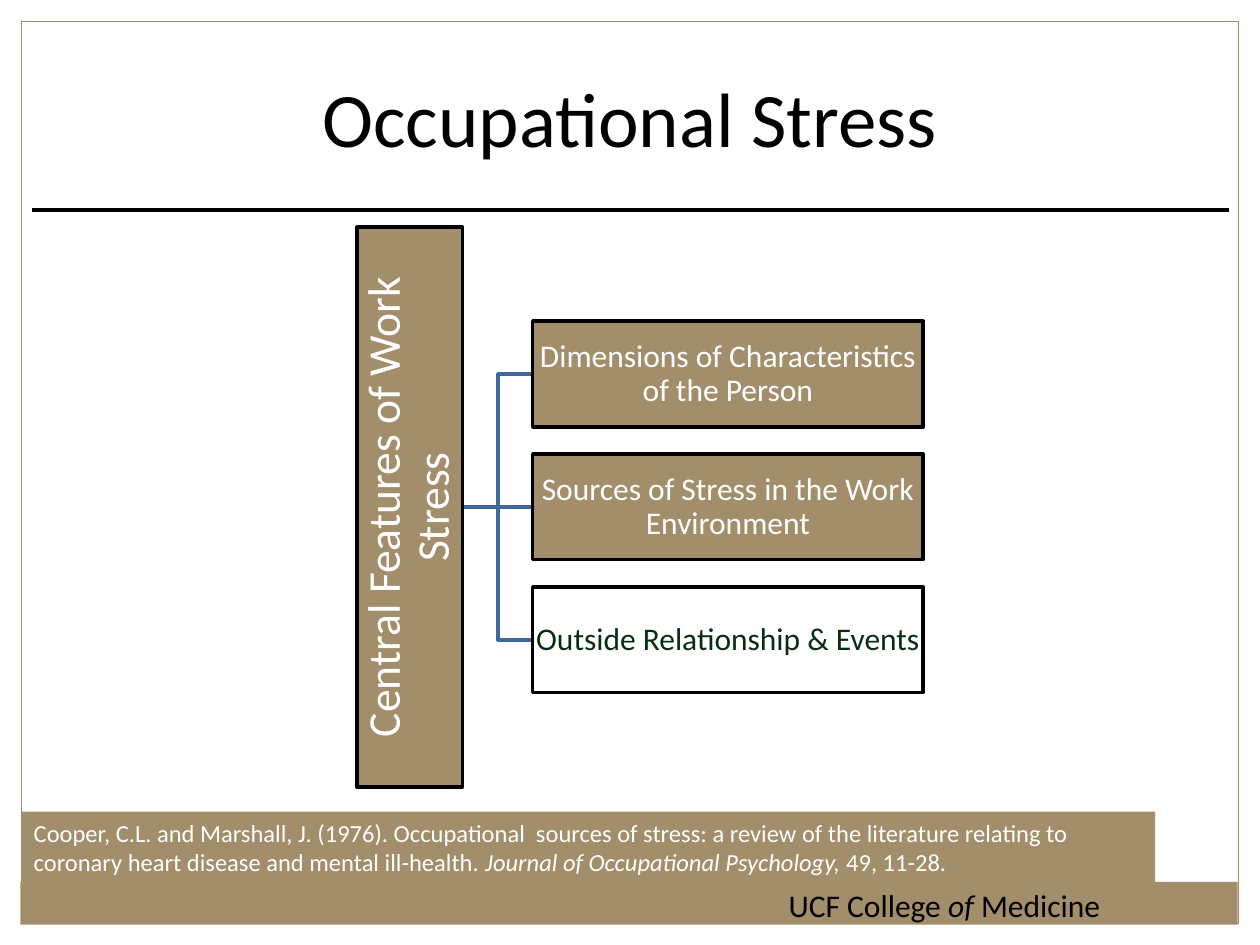
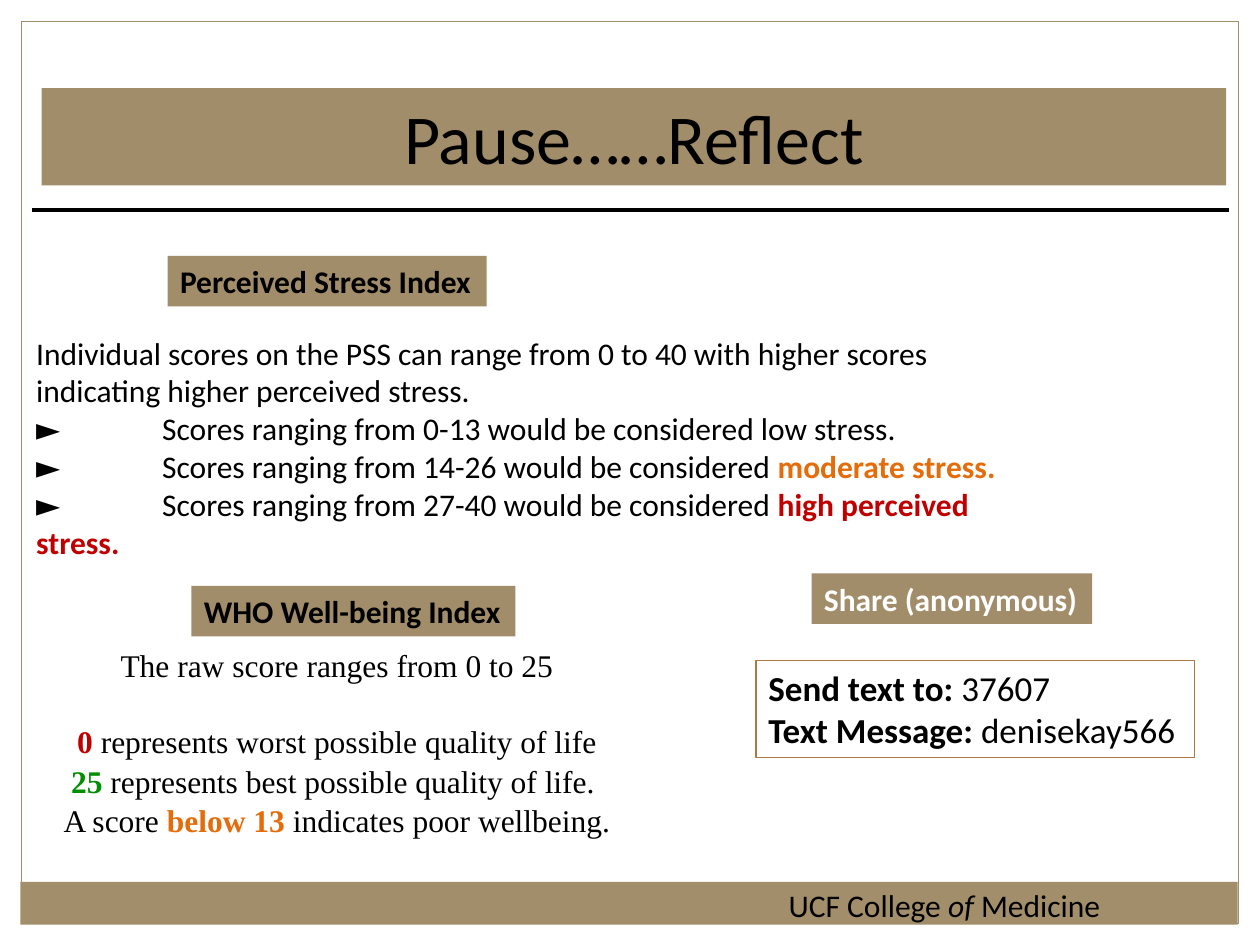
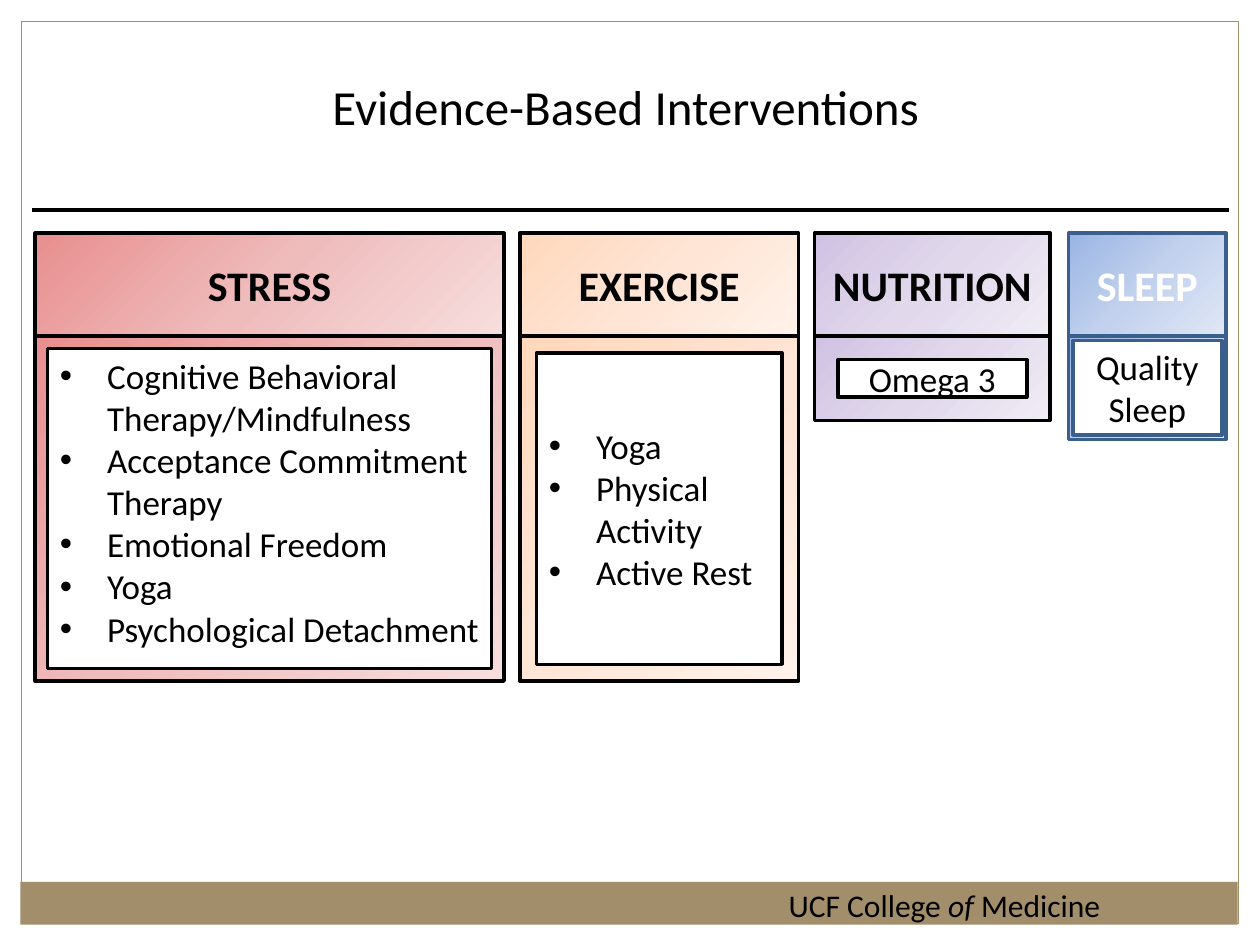
"""Build three slides on occupational stress and its interventions."""
from lxml import etree
from pptx import Presentation
from pptx import util as u
from pptx.dml import color
from pptx.enum import shapes, text
from pptx.oxml import ns, parse_xml

GOLD, TAN, BLACK, WHITE = "A28E6A", "A28D6A", "000000", "FFFFFF"
ORANGE, RED, GREEN, STEEL = "E46C0A", "C00000", "008F00", "3A5F8C"
CENTER = text.PP_ALIGN.CENTER
TOP, MIDDLE, BOTTOM = (
    text.MSO_ANCHOR.TOP, text.MSO_ANCHOR.MIDDLE, text.MSO_ANCHOR.BOTTOM)
RECT, FRAME = shapes.MSO_SHAPE.RECTANGLE, shapes.MSO_SHAPE.FRAME


def rgb(value):
    """Return the colour for a hex string."""
    return color.RGBColor.from_string(value)


def set_all(target, values):
    """Set attributes of an object from a dict."""
    for name, value in values.items():
        setattr(target, name, value)


def add_span(para, wording, style):
    """Add a run with the given font style."""
    span = para.add_run()
    span.text = wording
    values = {"name": "Calibri", "size": 18, "color": BLACK, **style}
    span.font.color.rgb = rgb(values.pop("color"))
    values["size"] = u.Pt(values["size"])
    set_all(span.font, values)


def write(box, lines, style=None, layout=None, anchor=TOP, wrap=True, inset=None):
    """Fill a box with lines, each a string or a list of (wording, style)."""
    frame = box.text_frame
    set_all(frame, {"word_wrap": wrap, "vertical_anchor": anchor})
    if inset is not None:
        sides = ("left", "right", "top", "bottom")
        set_all(frame, {f"margin_{side}": u.Cm(inset) for side in sides})
    for index, line in enumerate(lines):
        para = frame.add_paragraph() if index else frame.paragraphs[0]
        set_all(para, {"alignment": text.PP_ALIGN.LEFT, **(layout or {})})
        for wording, extra in [(line, {})] if isinstance(line, str) else line:
            add_span(para, wording, {**(style or {}), **extra})
    return frame.paragraphs


def add_text(page, place, lines, **options):
    """Add a text box."""
    box = page.shapes.add_textbox(*map(u.Cm, place))
    return write(box, lines, **options)


def paint(shape, fill=None, line=None, width=2):
    """Set the fill and outline of a shape."""
    shape.shadow.inherit = False
    if fill:
        shape.fill.solid()
        shape.fill.fore_color.rgb = rgb(fill)
    else:
        shape.fill.background()
    if line:
        shape.line.color.rgb = rgb(line)
        shape.line.width = u.Pt(width)
    else:
        shape.line.fill.background()


def add_box(page, place, fill=None, line=None, width=2, kind=RECT):
    """Add a preset shape."""
    box = page.shapes.add_shape(kind, *map(u.Cm, place))
    paint(box, fill, line, width)
    return box


def shade(box, stops):
    """Give a shape a gradient that spreads from its top left corner."""
    marks = "".join(
        f'<a:gs pos="{index * 50000}"><a:srgbClr val="{stop}"/></a:gs>'
        for index, stop in enumerate(stops))
    gradient = parse_xml(
        f'<a:gradFill {ns.nsdecls("a")} rotWithShape="1"><a:gsLst>{marks}</a:gsLst>'
        '<a:path path="circle"><a:fillToRect r="100000" b="100000"/></a:path>'
        '<a:tileRect l="-100000" t="-100000"/></a:gradFill>')
    old = box._element.spPr.find(ns.qn("a:noFill"))
    old.getparent().replace(old, gradient)


def add_bullet(para):
    """Give a paragraph a round bullet with a hanging indent."""
    props = para._p.get_or_add_pPr()
    indent = u.Cm(0.95)
    props.set("marL", str(indent))
    props.set("indent", str(-indent))
    etree.SubElement(props, ns.qn("a:buFont")).set("typeface", "Arial")
    etree.SubElement(props, ns.qn("a:buChar")).set("char", "•")


def add_tab(para, distance):
    """Add a left tab stop."""
    stops = etree.SubElement(para._p.get_or_add_pPr(), ns.qn("a:tabLst"))
    stop = etree.SubElement(stops, ns.qn("a:tab"))
    stop.set("pos", str(u.Cm(distance)))
    stop.set("algn", "l")


def add_path(page, points):
    """Add an open bracket line through the points."""
    start, *rest = [tuple(map(u.Cm, point)) for point in points]
    builder = page.shapes.build_freeform(*start)
    builder.add_line_segments(rest, close=False)
    paint(builder.convert_to_shape(), line="3F6797")


def add_page(deck):
    """Add a blank slide with the frame, footer band and title rule."""
    page = deck.slides.add_slide(deck.slide_layouts[6])
    add_box(page, (0.41, 17.78, 24.54, 0.86), GOLD)
    add_box(page, (0.43, 0.43, 24.54, 18.19), line=GOLD, width=0.75)
    add_text(page, (15.65, 17.73, 7.8, 1.02),
             [[("UCF College ", {}), ("of ", {"italic": True}), ("Medicine", {})]])
    rule = page.shapes.add_connector(
        shapes.MSO_CONNECTOR.STRAIGHT, *map(u.Cm, (0.64, 4.24, 24.77, 4.24)))
    rule.line.color.rgb = rgb(BLACK)
    rule.line.width = u.Pt(2.25)
    etree.SubElement(rule._element.spPr, ns.qn("a:effectLst"))
    return page


def add_label(page, place, wording, ink=BLACK):
    """Add a bold section label on a tan band."""
    write(add_box(page, place, TAN), [wording],
          {"bold": True, "color": ink}, wrap=False)


def add_stress_page(deck):
    """Add the diagram of the central features of work stress."""
    page = add_page(deck)
    add_text(page, (1.27, 0.76, 22.86, 3.18), ["Occupational Stress"],
             style={"size": 44}, layout={"alignment": CENTER}, anchor=MIDDLE)
    citation = [
        ("Cooper, C.L. and Marshall, J. (1976). Occupational  sources of stress: "
         "a review of the literature relating to coronary heart disease and "
         "mental ill-health.", {}),
        (" Journal of Occupational Psychology, ", {"italic": True}),
        ("49, 11-28.", {})]
    write(add_box(page, (0.43, 16.36, 22.86, 1.45), GOLD), [citation],
          {"size": 14, "color": WHITE})

    features = [
        ("Dimensions of Characteristics of the Person", GOLD, WHITE),
        ("Sources of Stress in the Work Environment", GOLD, WHITE),
        ("Outside Relationship & Events", WHITE, "082E11")]
    trunk, bend, branch, height, step = 9.35, 10.04, 10.74, 2.13, 2.68
    middle = 10.22
    centred = {"alignment": CENTER, "line_spacing": 0.9}
    for index, (wording, fill, ink) in enumerate(features):
        level = middle + (index - 1) * step
        add_path(page, [(trunk, middle), (bend, middle), (bend, level), (branch, level)])
        box = add_box(page, (branch, level - height / 2, 7.87, height), fill, BLACK)
        write(box, [wording], {"color": ink}, centred, MIDDLE, inset=0.03)
    root = add_box(page, (2.62, middle - height / 2, 11.28, height), GOLD, BLACK)
    root.rotation = 270
    write(root, ["Central Features of Work Stress"],
          {"size": 26, "color": WHITE}, centred, MIDDLE, inset=0.05)


def add_reflect_page(deck):
    """Add the two score guides and the sharing details."""
    page = add_page(deck)
    strong = {"bold": True}
    write(add_box(page, (0.84, 1.78, 23.88, 1.96), TAN), ["Pause……Reflect"],
          {"size": 40}, {"alignment": CENTER})
    scores = add_text(page, (0.48, 6.6, 19.89, 4.11), [
        "Individual scores on the PSS can range from 0 to 40 with higher scores "
        "indicating higher perceived stress.",
        "►\tScores ranging from 0-13 would be considered low stress.",
        [("►\tScores ranging from 14-26 would be considered ", {}),
         ("moderate stress.", {**strong, "color": ORANGE})],
        [("►\tScores ranging from 27-40 would be considered ", {}),
         ("high perceived stress.", {**strong, "color": RED})]])
    for para in scores[1:]:
        add_tab(para, 2.54)
    add_label(page, (3.38, 5.16, 6.43, 1.02), "Perceived Stress Index")
    wellbeing = add_text(page, (0.76, 11.4, 12.07, 5.64), [
        "The raw score ranges from 0 to 25",
        [("0", {**strong, "color": RED}),
         (" represents worst possible quality of life", {})],
        [("25", {**strong, "color": GREEN}),
         (" represents best possible quality of life. ", {})],
        [("A score ", {}), ("below 13 ", {**strong, "color": ORANGE}),
         ("indicates poor wellbeing.", {})]],
        style={"name": "Times New Roman"}, layout={"alignment": CENTER}, anchor=BOTTOM)
    for para, gap in zip(wellbeing[1:], (22, 1, 1)):
        para.space_before = u.Pt(gap)
    add_label(page, (3.86, 11.81, 6.53, 1.02), "WHO Well-being Index")
    add_label(page, (16.36, 11.56, 5.66, 1.02), "Share (anonymous)", WHITE)
    write(add_box(page, (15.24, 13.31, 8.84, 1.96), line="AB7942", width=0.75), [
        [("Send text to: ", strong), ("37607", {})],
        [("Text Message: ", strong), ("denisekay566", {})]], {"size": 20})


def add_intervention(page, left, width, height, rim, stops, heading, items,
                     line=BLACK, ink=BLACK, anchor=MIDDLE):
    """Add a heading with a framed list or single entry beneath it."""
    top, head = 4.7, 2.08
    body = add_box(page, (left, top + head, width, height), line=line, kind=FRAME)
    body.adjustments[0] = rim
    title = add_box(page, (left, top, width, head), line=line)
    for box in (body, title):
        shade(box, stops)
    centred = {"alignment": CENTER}
    write(title, [heading], {"size": 24, "bold": True, "color": ink}, centred, MIDDLE)
    listed = len(items) > 1
    paras = write(body, items, {"size": 20}, {} if listed else centred, anchor)
    if listed:
        for para in paras:
            add_bullet(para)


def add_interventions_page(deck):
    """Add the four columns of interventions."""
    page = add_page(deck)
    add_text(page, (6.45, 1.42, 12.47, 1.45), ["Evidence-Based Interventions"],
             style={"size": 28}, wrap=False)
    add_intervention(page, 21.54, 3.18, 2.08, 0.042, ("9AB5E4", "C2D1ED", "E1E8F5"),
                     "SLEEP", ["Quality Sleep"], line=STEEL, ink=WHITE)
    add_intervention(page, 16.42, 4.75, 1.7, 0.277, ("D0C2E2", "E1D8EC", "F0ECF5"),
                     "NUTRITION", ["Omega 3"])
    add_intervention(page, 0.71, 9.45, 6.95, 0.036, ("E98F8F", "EFBCBC", "F7DEDE"),
                     "STRESS", ["Cognitive Behavioral Therapy/Mindfulness",
                                "Acceptance Commitment Therapy", "Emotional Freedom",
                                "Yoga", "Psychological Detachment"], anchor=TOP)
    add_intervention(page, 10.48, 5.62, 6.95, 0.06, ("FFD8BC", "FFE5D5", "FFF2EA"),
                     "EXERCISE", ["Yoga", "Physical Activity", "Active Rest"])


def main():
    """Build and save the deck."""
    deck = Presentation()
    set_all(deck, {"slide_width": u.Cm(25.4), "slide_height": u.Cm(19.05)})
    add_stress_page(deck)
    add_reflect_page(deck)
    add_interventions_page(deck)
    deck.save("out.pptx")


if __name__ == "__main__":
    main()
